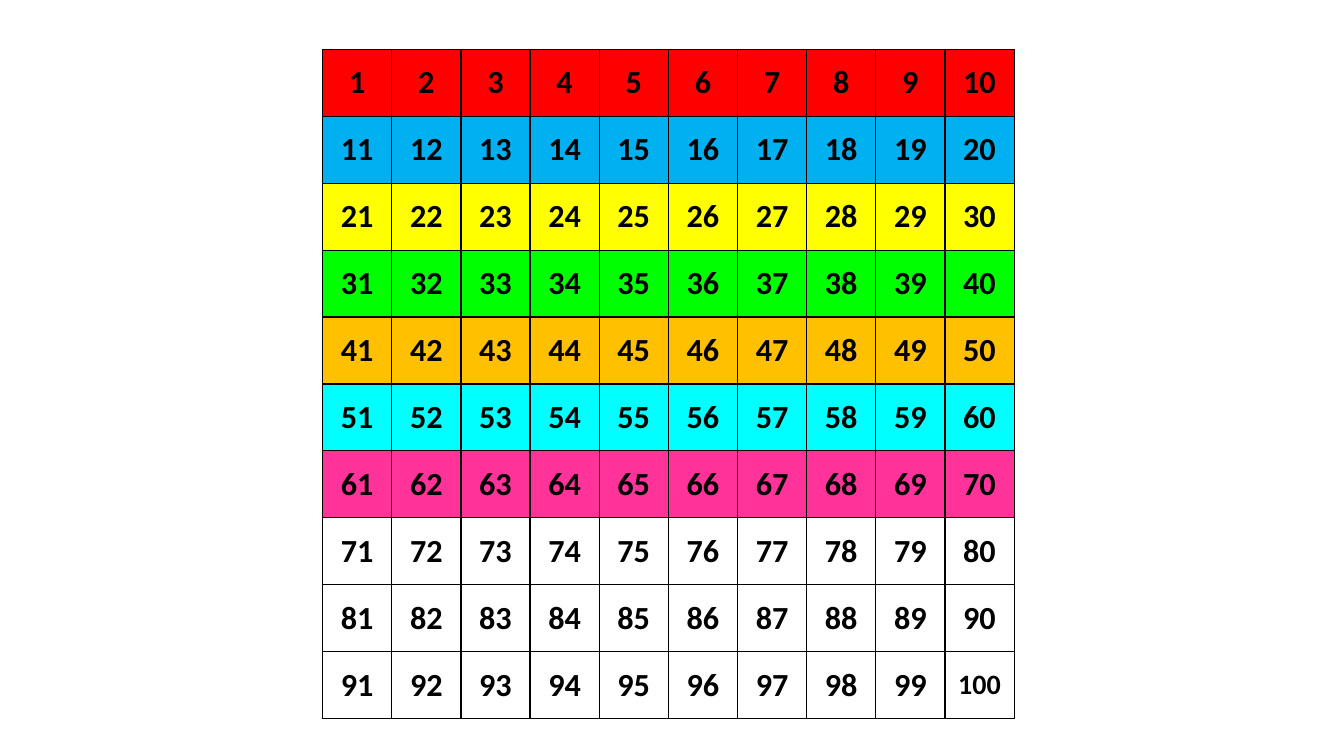
import dataclasses

import lxml.etree
import pptx
import pptx.dml.color
import pptx.enum.text
import pptx.oxml.ns
import pptx.util

Inches = pptx.util.Inches
Pt = pptx.util.Pt


@dataclasses.dataclass(frozen=True)
class Theme:
    font: str = "Calibri"
    ink: str = "000000"
    number_size: float = 23
    hundred_size: float = 20
    border_width: float = 1
    # One colour per row of ten; None leaves the row unfilled
    row_fills: tuple = ("FF0000", "00B0F0", "FFFF00", "00FF00", "FFC000",
                        "00FFFF", "FF3399", None, None, None)


class SlideBuilder:
    def __init__(self, s, theme):
        self.s = s
        self.theme = theme

    def number_grid(self, left, top, width, height, columns):
        fills = self.theme.row_fills
        frame = self.s.shapes.add_table(
            len(fills), columns, Inches(left), Inches(top), Inches(width), Inches(height))
        table = frame.table
        table.first_row = table.horz_banding = False
        for row, fill in enumerate(fills):
            for column in range(columns):
                number = row * columns + column + 1
                self.number_cell(table.cell(row, column), number, fill)

    def number_cell(self, cell, number, fill):
        theme = self.theme
        cell.margin_left = cell.margin_right = Inches(0.13)
        cell.margin_top = cell.margin_bottom = Inches(0.06)
        cell.vertical_anchor = pptx.enum.text.MSO_ANCHOR.MIDDLE
        if fill:
            cell.fill.solid()
            cell.fill.fore_color.rgb = pptx.dml.color.RGBColor.from_string(fill)
        else:
            cell.fill.background()
        self.cell_borders(cell)

        cell.text_frame.text = str(number)
        p = cell.text_frame.paragraphs[0]
        p.alignment = pptx.enum.text.PP_ALIGN.CENTER
        font = p.runs[0].font
        font.name = theme.font
        font.size = Pt(theme.hundred_size if number == 100 else theme.number_size)
        font.bold = True
        font.color.rgb = pptx.dml.color.RGBColor.from_string(theme.ink)

    def cell_borders(self, cell):
        qn = pptx.oxml.ns.qn
        properties = cell._tc.get_or_add_tcPr()
        # Border elements come before the fill
        for index, side in enumerate(("a:lnL", "a:lnR", "a:lnT", "a:lnB")):
            line = lxml.etree.Element(qn(side), w=str(Pt(self.theme.border_width)))
            solid = lxml.etree.SubElement(line, qn("a:solidFill"))
            lxml.etree.SubElement(solid, qn("a:srgbClr"), val=self.theme.ink)
            properties.insert(index, line)


def main():
    # Presentation and blank slide
    prs = pptx.Presentation()
    prs.slide_width = Inches(13.33)
    prs.slide_height = Inches(7.5)
    s = prs.slides.add_slide(prs.slide_layouts[6])

    # Hundred square
    SlideBuilder(s, Theme()).number_grid(3.2, 0.49, 6.86, 6.64, columns=10)

    prs.save("out.pptx")


if __name__ == "__main__":
    main()
